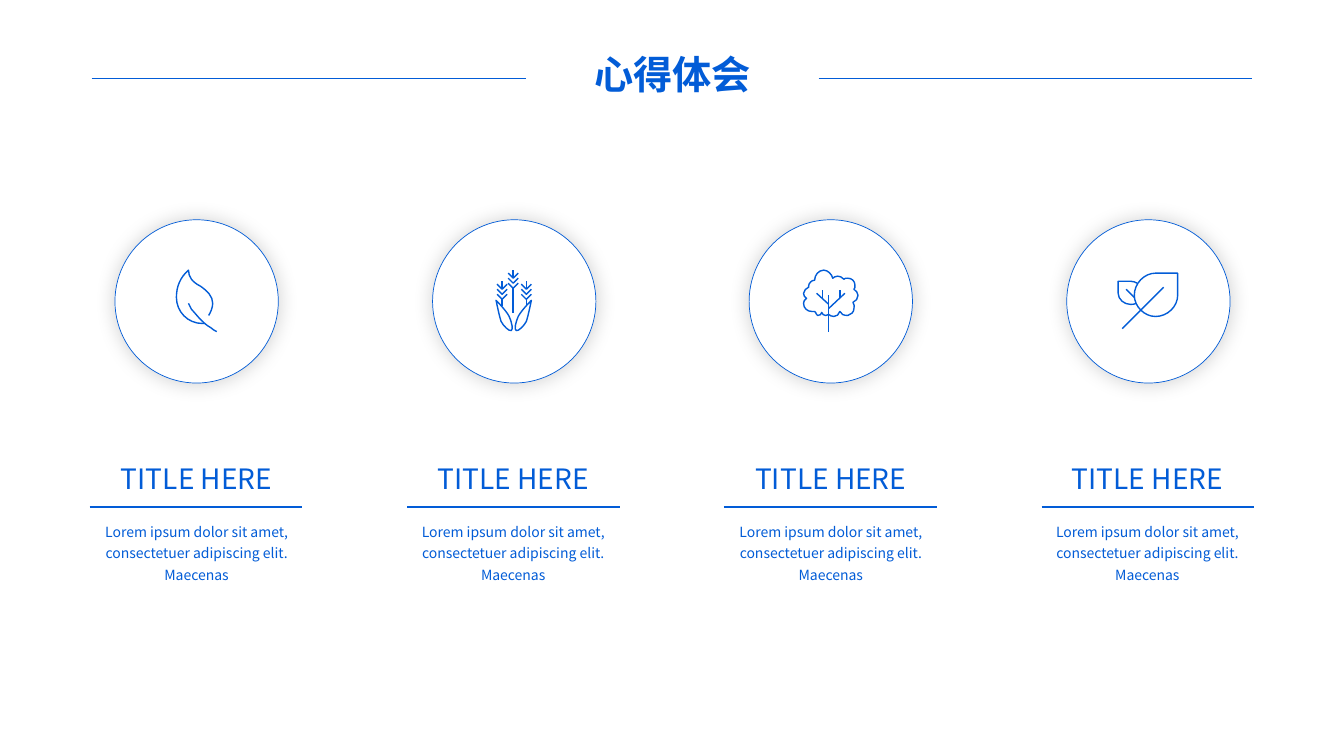
from lxml import etree
from pptx import Presentation
from pptx import util as u
from pptx.dml.color import RGBColor
from pptx.enum import shapes, text
from pptx.oxml import parse_xml
from pptx.oxml.ns import nsdecls, qn

PX = 9144  # one px is a hundredth of an inch
BLUE, WHITE = "025CD7", "FFFFFF"
FONT = "Noto Sans CJK SC"

# Icon strokes, measured from the circle's centre: a start point, then
# pairs for straight lines and sixes for Bezier curves.
leaf = [
    [(12, 14), (14, 11, 16, 6, 16, 2), (16, -5, 11, -10, 4, -15),
     (-4, -19, -8, -24, -8, -31), (-16, -24, -20, -15, -20, -4),
     (-20, 10, -9, 22, 6, 22), (8, 22)],
    [(20, 30), (18, 29, 16, 28, 14, 26), (10, 24, 7, 21, 4, 18),
     (1, 15, -2, 11, -5, 8), (-6, 6, -7, 4, -8, 2)],
]

husk = [(-13, 20), (-11, 24, -5, 30, -3, 29), (-1, 28, -2, 22, -5, 15),
        (-8, 9, -18, -1, -18, -1), (-18, -1, -15, 14, -13, 20)]
mirrored_husk = [tuple(v if i % 2 else -1 - v for i, v in enumerate(part))
                 for part in husk]
wheat = [husk, mirrored_husk]
for x, tip, stalk_end in ((-12, -20, 5), (-1, -31, 12), (12, -20, 4)):
    wheat += [[(x, tip), (x, tip + 8)], [(x, tip + 18), (x, stalk_end)]]
    wheat += [[(x - 5, tip + y), (x, tip + y + 5), (x + 5, tip + y)]
              for y in (3, 8, 13)]

tree = [
    [(27, -6), (27, -8, 25, -11, 23, -12), (24, -13, 24, -14, 24, -16),
     (24, -20, 21, -23, 17, -23), (15, -23, 14, -23, 13, -22),
     (11, -24, 9, -25, 7, -25), (5, -25, 3, -24, 2, -23),
     (1, -27, -3, -31, -7, -31), (-12, -31, -16, -26, -16, -21),
     (-19, -21, -22, -18, -22, -15), (-22, -14),
     (-24, -13, -27, -11, -27, -8), (-27, -6, -26, -4, -24, -3),
     (-26, -2, -27, 0, -27, 2), (-27, 7, -23, 10, -19, 10),
     (-16, 10), (-15, 11), (-15, 12, -14, 13, -13, 14),
     (-11, 14, -9, 13, -9, 11), (-8, 13, -7, 14, -5, 14),
     (-4, 14, -3, 14, -2, 13), (-1, 14, 1, 15, 3, 15),
     (6, 15, 8, 13, 9, 10), (10, 13, 13, 14, 17, 14),
     (20, 13, 23, 11, 23, 7), (24, 5, 23, 3, 22, 1),
     (25, 0, 27, -3, 27, -6)],
    [(-2, -6), (-2, 30)],
    [(14, -8), (-2, 7)],
    [(-2, 3), (-14, -8)],
    [(-8, -11), (-8, -2)],
    [(9, -11), (9, -3)],
]

two_leaves = [
    [(29, -28), (29, -6), (29, 5, 19, 15, 7, 15), (-4, 15, -14, 5, -14, -6),
     (-14, -18, -4, -28, 7, -28), (29, -28)],
    [(-26, 27), (15, -14)],
    [(-22, -12), (-14, -4)],
    [(-11, -18), (-13, -19, -15, -20, -18, -20), (-30, -20), (-30, -8),
     (-30, -2, -24, 3, -18, 3), (-16, 3, -14, 3, -12, 2)],
]


def rgb(value):
    return RGBColor.from_string(value)


def write(box, words, size, bold=False, spacing=None):
    """Put one centred blue paragraph into a text shape."""
    frame = box.text_frame
    frame.text = words
    frame.word_wrap = True
    paragraph = frame.paragraphs[0]
    paragraph.alignment = text.PP_ALIGN.CENTER
    paragraph.line_spacing = spacing
    font = paragraph.runs[0].font
    font.size, font.bold, font.name = u.Pt(size), bold, FONT
    font.color.rgb = rgb(BLUE)
    etree.SubElement(paragraph.runs[0]._r.rPr, qn("a:ea"), typeface=FONT)


prs = Presentation()
prs.slide_width, prs.slide_height = 1333 * PX, 750 * PX
slide = prs.slides.add_slide(prs.slide_layouts[5])

title = slide.shapes.title
title.left, title.top, title.width, title.height = [
    v * PX for v in (524, 45, 286, 57)]
write(title, "心得体会", 28, bold=True)
title.text_frame.vertical_anchor = text.MSO_ANCHOR.MIDDLE

text_centres = [195 + round(i * 943 / 3) for i in range(4)]
icon_centres = [195 + round(i * 944 / 3) for i in range(4)]
rules = [(91, 522, 78, 0.5), (812, 1242, 78, 0.5)]
rules += [(centre - 106, centre + 105, 503, 1) for centre in icon_centres]
for start, end, y, weight in rules:
    rule = slide.shapes.add_connector(
        shapes.MSO_CONNECTOR.STRAIGHT, start * PX, y * PX, end * PX, y * PX)
    rule.line.color.rgb = rgb(BLUE)
    rule.line.width = u.Pt(weight)
    etree.SubElement(rule._element.spPr, qn("a:effectLst"))

icons = (leaf, wheat, tree, two_leaves)
for text_centre, centre, icon in zip(text_centres, icon_centres, icons):
    heading = slide.shapes.add_textbox(
        (text_centre - 115) * PX, 453 * PX, 230 * PX, 44 * PX)
    write(heading, "TITLE HERE", 20)
    body = slide.shapes.add_textbox(
        (text_centre - 115) * PX, 509 * PX, 230 * PX, 74 * PX)
    write(body, "Lorem ipsum dolor sit amet, consectetuer adipiscing elit. "
          "Maecenas", 10, spacing=1.3)

    circle = slide.shapes.add_shape(
        shapes.MSO_SHAPE.OVAL, (centre - 81) * PX, 218 * PX, 162 * PX, 162 * PX)
    circle.fill.solid()
    circle.fill.fore_color.rgb = rgb(WHITE)
    circle.line.color.rgb = rgb(BLUE)
    circle.line.width = u.Pt(0.5)
    circle._element.spPr.append(parse_xml(
        f'<a:effectLst {nsdecls("a")}><a:outerShdw blurRad="{u.Pt(15)}" '
        'algn="ctr" rotWithShape="0"><a:srgbClr val="000000">'
        '<a:alpha val="18000"/></a:srgbClr></a:outerShdw></a:effectLst>'))

    outline = slide.shapes.build_freeform(*icon[0][0], scale=PX)
    for n, stroke in enumerate(icon):
        if n:
            outline.move_to(*stroke[0])
        outline.add_line_segments([part[-2:] for part in stroke[1:]],
                                  close=stroke[0] == stroke[-1][-2:])
    drawing = outline.convert_to_shape(centre * PX, 299 * PX)
    drawing.fill.background()
    drawing.line.color.rgb = rgb(BLUE)
    drawing.line.width = u.Pt(1)
    drawing.shadow.inherit = False

    # Bend the segments that are curves, in the outline's own coordinates.
    left = min(part[-2] for stroke in icon for part in stroke)
    top = min(part[-1] for stroke in icon for part in stroke)
    parts = [part for stroke in icon for part in stroke[1:]]
    segments = list(drawing._element.iter(qn("a:lnTo")))
    for segment, part in zip(segments, parts):
        if len(part) == 6:
            segment.tag = qn("a:cubicBezTo")
            for n, (x, y) in enumerate((part[:2], part[2:4])):
                segment.insert(n, parse_xml(
                    f'<a:pt {nsdecls("a")} x="{x - left}" y="{y - top}"/>'))

prs.save("out.pptx")
